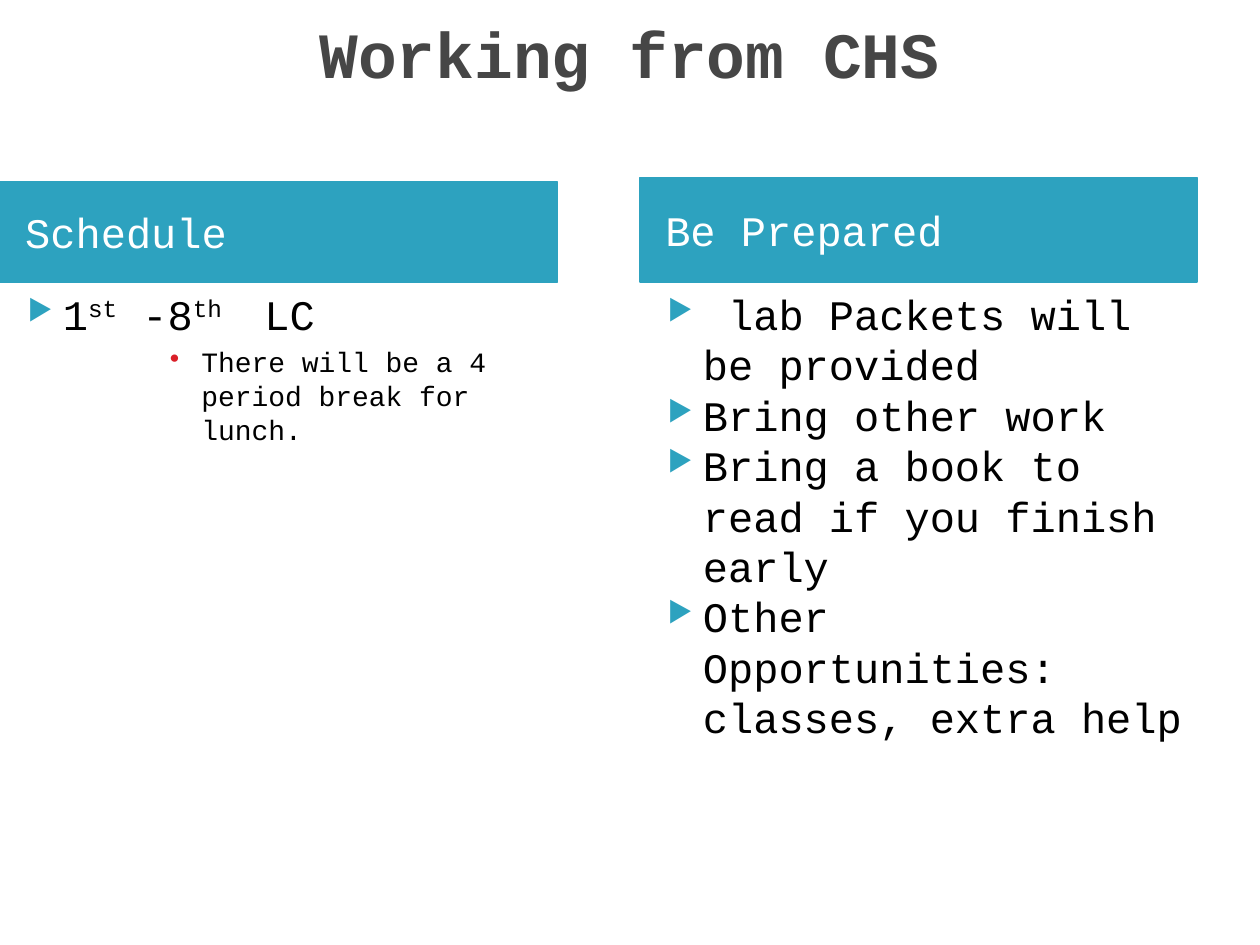
from lxml.etree import SubElement
from pptx import Presentation
from pptx.dml.color import RGBColor
from pptx.enum.shapes import MSO_SHAPE
from pptx.enum.text import MSO_ANCHOR, PP_ALIGN
from pptx.oxml.ns import qn
from pptx.util import Inches, Pt

COLORS = {"title": "464646", "teal": "2DA2BF", "red": "DA1F28",
          "white": "FFFFFF", "black": "000000"}
FONT = "Courier New"


def style_runs(paragraph, size, color, bold=False):
    for run in paragraph.runs:
        run.font.name = FONT
        run.font.size = Pt(size)
        run.font.bold = bold
        run.font.color.rgb = RGBColor.from_string(COLORS[color])


def add_bullet(paragraph, char, color, indent, hanging, percent=100):
    """Give the paragraph a coloured bullet and a hanging indent in inches."""
    properties = paragraph._p.get_or_add_pPr()
    properties.set("marL", str(Inches(indent)))
    properties.set("indent", str(-Inches(hanging)))
    bullet_color = SubElement(properties, qn("a:buClr"))
    SubElement(bullet_color, qn("a:srgbClr"), val=COLORS[color])
    SubElement(properties, qn("a:buSzPct"), val=str(percent * 1000))
    SubElement(properties, qn("a:buChar"), char=char)


prs = Presentation()
prs.slide_width, prs.slide_height = Inches(10), Inches(7.5)
slide = prs.slides.add_slide(prs.slide_layouts[6])

# Title
title = slide.shapes.add_textbox(Inches(0.5), Inches(0.06), Inches(9), Inches(1.49))
title_frame = title.text_frame
title_frame.word_wrap = True
title_frame.vertical_anchor = MSO_ANCHOR.TOP
title_frame.text = "Working from CHS"
title_frame.paragraphs[0].alignment = PP_ALIGN.CENTER
style_runs(title_frame.paragraphs[0], 36.9, "title", bold=True)

# Two columns: a header band above a list. Items are (text, superscript) parts.
column_width, list_top, list_height = Inches(4.42), Inches(2.24), Inches(4.31)
columns = [
    ("Schedule", 0, 1.44,
     [[("1", False), ("st", True), (" -8", False), ("th", True), ("\tLC", False)]]),
    ("Be Prepared", 5.08, 1.41,
     [[(text, False)] for text in (
         " lab Packets will be provided",
         "Bring other work",
         "Bring a book to read if you finish early",
         "Other Opportunities: classes, extra help")]),
]
lists = []
for heading, left, band_top, items in columns:
    band = slide.shapes.add_shape(MSO_SHAPE.RECTANGLE, Inches(left), Inches(band_top),
                                  column_width, list_top - Inches(band_top))
    band.shadow.inherit = False
    band.fill.solid()
    band.fill.fore_color.rgb = RGBColor.from_string(COLORS["teal"])
    band.line.color.rgb = RGBColor.from_string(COLORS["teal"])
    band.line.width = Pt(0.75)
    band_frame = band.text_frame
    band_frame.margin_left = Inches(0.2)
    band_frame.vertical_anchor = MSO_ANCHOR.MIDDLE
    band_frame.text = heading
    band_frame.paragraphs[0].alignment = PP_ALIGN.LEFT
    style_runs(band_frame.paragraphs[0], 24, "white")

    list_frame = slide.shapes.add_textbox(Inches(left), list_top, column_width,
                                          list_height).text_frame
    list_frame.word_wrap = True
    lists.append(list_frame)
    for index, parts in enumerate(items):
        item = list_frame.add_paragraph() if index else list_frame.paragraphs[0]
        add_bullet(item, "▶", "teal", 0.4, 0.28, percent=68)
        for text, superscript in parts:
            run = item.add_run()
            run.text = text
            if superscript:
                run.font._element.set("baseline", "30000")
        style_runs(item, 24, "black")

# Note under the schedule
lunch_note = lists[0].add_paragraph()
lunch_note.text = "There will be a 4 period break for lunch."
lunch_note.level = 4
lunch_note.space_before = Pt(3.5)
add_bullet(lunch_note, "•", "red", 1.5, 0.25)
style_runs(lunch_note, 16, "black")

prs.save("out.pptx")
